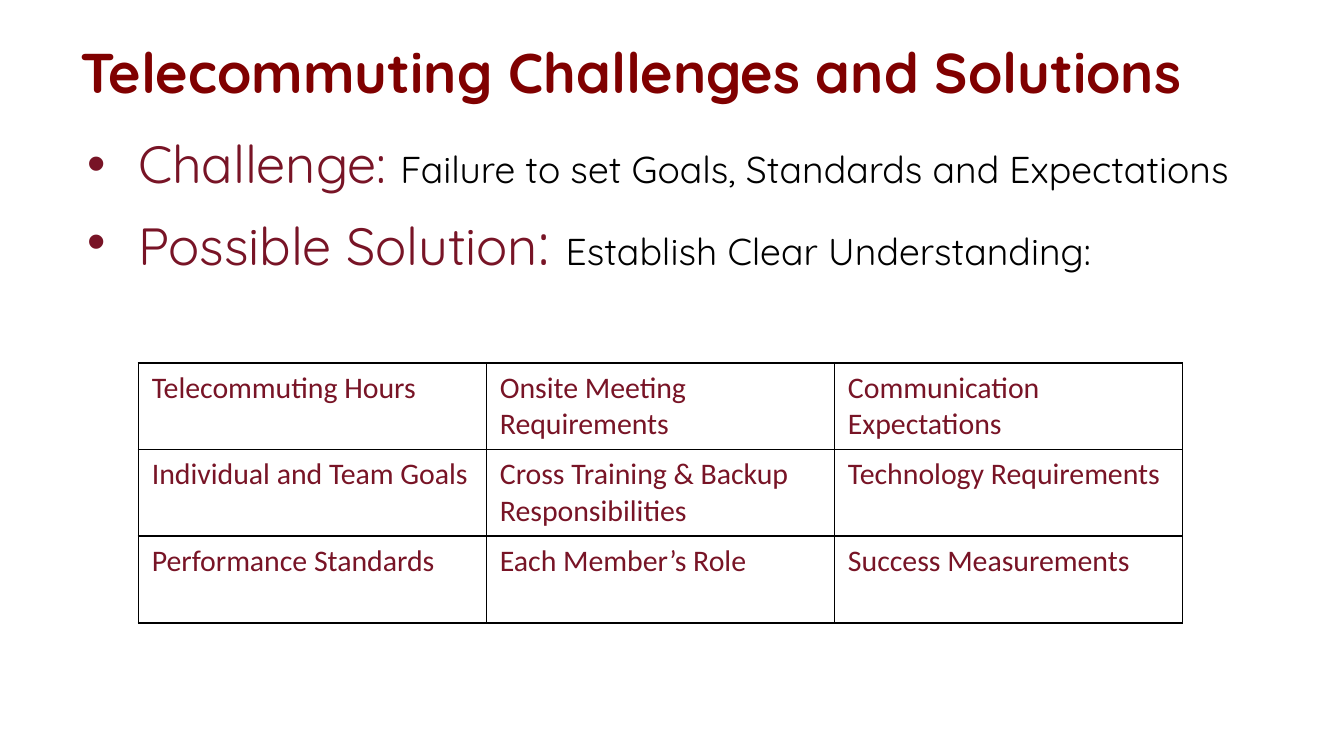
from lxml.etree import SubElement
from pptx import Presentation
from pptx.dml.color import RGBColor
from pptx.enum.text import MSO_ANCHOR, MSO_AUTO_SIZE, PP_ALIGN
from pptx.oxml.ns import qn
from pptx.util import Inches, Pt

RED = RGBColor(0x80, 0x00, 0x00)
WINE = RGBColor(0x78, 0x14, 0x26)
BLACK = RGBColor(0, 0, 0)
HEAD, BODY = "Quicksand", "Calibri"

# Content
TITLE = "Telecommuting Challenges and Solutions"
POINTS = [
    [("Challenge: ", 28, WINE),
     ("Failure to set Goals, Standards and Expectations", 20, BLACK)],
    [("Possible Solution", 28, WINE), (": ", 32, WINE),
     ("Establish Clear Understanding:", 20, BLACK)],
]
TOPICS = [
    ["Telecommuting Hours", "Onsite Meeting Requirements", "Communication Expectations"],
    ["Individual and Team Goals", "Cross Training & Backup Responsibilities",
     "Technology Requirements"],
    ["Performance Standards", "Each Member’s Role", "Success Measurements"],
]
WIDE = 10
HIGH = WIDE * 9 / 16
COL, ROWS = 2.59, (0.64, 0.64, 0.65)


def add_run(para, text, size, color, face, bold=False):
    run = para.add_run()
    run.text = text
    font = run.font
    font.size, font.name, font.bold = Pt(size), face, bold
    font.color.rgb = color


def set_frame(frame):
    frame.word_wrap = True
    frame.auto_size = MSO_AUTO_SIZE.NONE
    frame.vertical_anchor = MSO_ANCHOR.TOP


def add_bullet(para):
    props = para._p.get_or_add_pPr()
    props.set("marL", str(Inches(0.38)))
    props.set("indent", str(Inches(-0.38)))
    SubElement(props, qn("a:buFont"), typeface="Arial")
    SubElement(props, qn("a:buChar"), char="•")


def add_border(cell):
    props = cell._tc.get_or_add_tcPr()
    for i, side in enumerate(("lnL", "lnR", "lnT", "lnB")):
        line = props.makeelement(qn("a:" + side), {"w": str(Pt(1))})
        fill = SubElement(line, qn("a:solidFill"))
        SubElement(fill, qn("a:srgbClr"), val=str(BLACK))
        props.insert(i, line)


deck = Presentation()
deck.slide_width, deck.slide_height = Inches(WIDE), Inches(HIGH)
slide = deck.slides.add_slide(deck.slide_layouts[5])

# Title
title = slide.shapes.title
title.left, title.top, title.width, title.height = map(Inches, (0.5, 0.23, 9, 0.94))
set_frame(title.text_frame)
para = title.text_frame.paragraphs[0]
para.alignment = PP_ALIGN.LEFT
add_run(para, TITLE, 30, RED, HEAD, True)

# Challenge and solution
box = slide.shapes.add_textbox(*map(Inches, (0.55, 0.93, 9, 3.68)))
frame = box.text_frame
set_frame(frame)
for i, runs in enumerate(POINTS):
    para = frame.add_paragraph() if i else frame.paragraphs[0]
    if i:
        para.space_before = Pt(6)
    add_bullet(para)
    for text, size, color in runs:
        add_run(para, text, size, color, HEAD)

# Topics table
cols = len(TOPICS[0])
table = slide.shapes.add_table(
    len(TOPICS), cols, *map(Inches, (1.03, 2.7, COL * cols, sum(ROWS)))).table
table.first_row = table.horz_banding = False
for r, topics in enumerate(TOPICS):
    table.rows[r].height = Inches(ROWS[r])
    for c, topic in enumerate(topics):
        cell = table.cell(r, c)
        cell.fill.background()
        add_border(cell)
        add_run(cell.text_frame.paragraphs[0], topic, 16, WINE, BODY)

deck.save("out.pptx")
